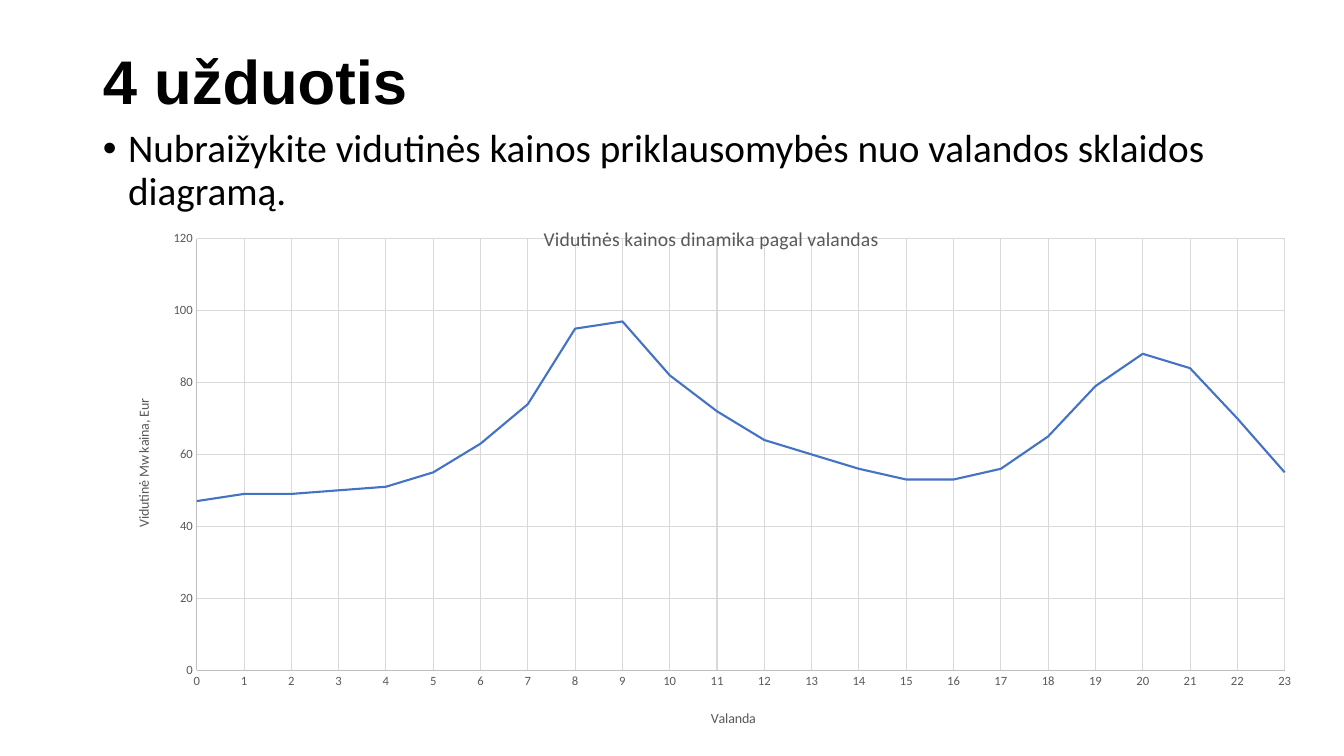
import pptx
import pptx.chart.data
import pptx.dml.color
import pptx.enum.chart
import pptx.enum.text
import pptx.oxml
import pptx.oxml.ns
import pptx.util
from lxml import etree

Inches, Pt = pptx.util.Inches, pptx.util.Pt
qn = pptx.oxml.ns.qn

COLORS = {"text": "000000", "label": "595959", "axis": "BFBFBF",
          "grid": "D9D9D9", "price": "4472C4"}
# Average price for each hour, from 0 to 23
HOURLY_PRICES = [47, 49, 49, 50, 51, 55, 63, 74, 95, 97, 82, 72,
                 64, 60, 56, 53, 53, 56, 65, 79, 88, 84, 70, 55]


class SlideBuilder:
    heading_font = "Arial"
    body_font = "Calibri"

    def __init__(self, prs):
        self.slide = prs.slides.add_slide(prs.slide_layouts[1])

    def color(self, name):
        return pptx.dml.color.RGBColor.from_string(COLORS[name])

    def style_font(self, font, name, size, color, bold=False):
        font.name, font.size, font.bold = name, Pt(size), bold
        font.color.rgb = self.color(color)

    def style_line(self, line, color, width=0.75):
        line.color.rgb = self.color(color)
        line.width = Pt(width)

    def placeholder(self, sp, box, text, font, size, anchor, bold=False):
        sp.left, sp.top, sp.width, sp.height = map(Inches, box)
        tf = sp.text_frame
        tf.word_wrap = True
        tf.auto_size = pptx.enum.text.MSO_AUTO_SIZE.NONE
        tf.vertical_anchor = anchor
        p = tf.paragraphs[0]
        p.alignment = pptx.enum.text.PP_ALIGN.LEFT
        p.line_spacing = 0.9
        r = p.add_run()
        r.text = text
        self.style_font(r.font, font, size, "text", bold)
        return p

    def title(self, box, text):
        p = self.placeholder(self.slide.shapes.title, box, text, self.heading_font, 44,
                             pptx.enum.text.MSO_ANCHOR.MIDDLE, bold=True)
        p.space_before = Pt(0)

    def bullet(self, box, text):
        p = self.placeholder(self.slide.placeholders[1], box, text, self.body_font, 28,
                             pptx.enum.text.MSO_ANCHOR.TOP)
        p.space_before = Pt(10)
        pPr = p._p.get_or_add_pPr()
        pPr.set("marL", str(Inches(0.25)))
        pPr.set("indent", str(Inches(-0.25)))
        etree.SubElement(pPr, qn("a:buFont")).set("typeface", "Arial")
        etree.SubElement(pPr, qn("a:buChar")).set("char", "•")

    def place(self, element, index, **values):
        """Give a chart part a manual layout, in fractions of the chart."""
        layout = element.find(qn("c:layout"))
        if layout is None:
            layout = etree.Element(qn("c:layout"))
            element.insert(index, layout)
        manual = etree.SubElement(layout, qn("c:manualLayout"))
        for tag, value in values.items():
            etree.SubElement(manual, qn("c:" + tag)).set("val", str(value))

    def chart_title(self, owner, text, size, x, y):
        owner.has_title = True
        title = owner.chart_title if hasattr(owner, "chart_title") else owner.axis_title
        r = title.text_frame.paragraphs[0].add_run()
        r.text = text
        self.style_font(r.font, self.body_font, size, "label")
        self.place(title._element, 1, xMode="edge", yMode="edge", x=x, y=y)

    def axis(self, axis, low, high, step):
        axis.minimum_scale, axis.maximum_scale, axis.major_unit = low, high, step
        axis.major_tick_mark = axis.minor_tick_mark = pptx.enum.chart.XL_TICK_MARK.NONE
        axis.has_major_gridlines = True
        self.style_line(axis.major_gridlines.format.line, "grid")
        self.style_line(axis.format.line, "axis")
        self.style_font(axis.tick_labels.font, self.body_font, 9, "label")

    def price_chart(self, box, prices):
        data = pptx.chart.data.XyChartData()
        points = data.add_series("Vidutinė kaina")
        for hour, price in enumerate(prices):
            points.add_data_point(hour, price)
        chart = self.slide.shapes.add_chart(
            pptx.enum.chart.XL_CHART_TYPE.XY_SCATTER_LINES_NO_MARKERS,
            *map(Inches, box), data).chart
        chart.has_legend = False
        self.style_font(chart.font, self.body_font, 10, "text")
        plot = chart.plots[0]
        plot.vary_by_categories = False
        series = plot.series[0]
        series.smooth = False
        series.marker.style = pptx.enum.chart.XL_MARKER_STYLE.NONE
        self.style_line(series.format.line, "price", 1.5)

        # Axes, titles and plot area
        self.axis(chart.category_axis, 0, len(prices) - 1, 1)
        self.axis(chart.value_axis, 0, 120, 20)
        self.chart_title(chart, "Vidutinės kainos dinamika pagal valandas", 14, 0.36, 0.04)
        self.chart_title(chart.category_axis, "Valanda", 10, 0.5, 0.93)
        self.chart_title(chart.value_axis, "Vidutinė Mw kaina, Eur", 10, 0.02, 0.36)
        plot_area = chart._chartSpace.chart.plotArea
        self.place(plot_area, 0, layoutTarget="inner", xMode="edge", yMode="edge",
                   x=0.074, y=0.072, w=0.906, h=0.791)


def main():
    prs = pptx.Presentation()
    prs.slide_width, prs.slide_height = Inches(13.33), Inches(7.5)
    s = SlideBuilder(prs)

    # Task heading and wording
    s.title((0.92, 0.11, 11.5, 1.45), "4 užduotis")
    s.bullet((0.92, 1.23, 11.91, 5.52),
             "Nubraižykite vidutinės kainos priklausomybės nuo valandos sklaidos diagramą.")

    # Price by hour
    s.price_chart((1.07, 1.98, 11.91, 5.41), HOURLY_PRICES)
    prs.save("out.pptx")


if __name__ == "__main__":
    main()
